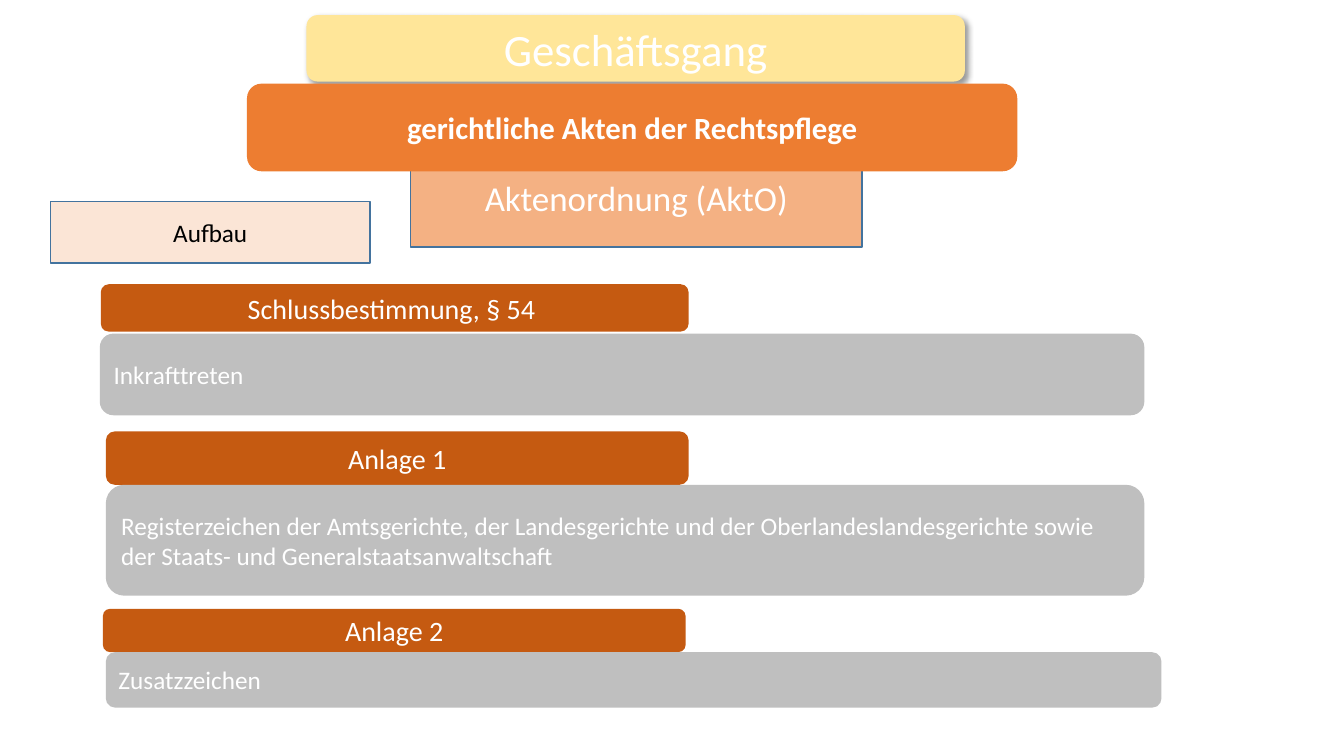
from lxml.etree import SubElement
from pptx import Presentation
from pptx.dml.color import RGBColor
from pptx.enum.shapes import MSO_SHAPE
from pptx.enum.text import MSO_ANCHOR, PP_ALIGN
from pptx.oxml.ns import qn
from pptx.util import Emu, Pt

SCALE = 9144
ROUND, RECT = MSO_SHAPE.ROUNDED_RECTANGLE, MSO_SHAPE.RECTANGLE
WHITE, EDGE = "FFFFFF", "43739E"
PARTS = [
    ("Schlussbestimmung, § 54 ", (100, 282, 583, 47),
     "Inkrafttreten", (99, 331, 1036, 81)),
    ("Anlage 1", (105, 428, 578, 53),
     "Registerzeichen der Amtsgerichte, der Landesgerichte und der "
     "Oberlandeslandesgerichte sowie der Staats- und Generalstaatsanwaltschaft",
     (105, 481, 1030, 110)),
    ("Anlage 2", (102, 604, 578, 43),
     "Zusatzzeichen", (105, 647, 1047, 55)),
]


def px(num):
    """Turn px into EMU."""
    return Emu(num * SCALE)


def paint(target, color):
    """Give a fill or font a solid colour."""
    if hasattr(target, "solid"):
        target.solid()
        target.fore_color.rgb = RGBColor.from_string(color)
    else:
        target.color.rgb = RGBColor.from_string(color)


def panel(slide, box, text, size, fill, kind=ROUND, edge=None,
          ink=WHITE, bold=False, align=PP_ALIGN.CENTER):
    """Place a filled shape with one paragraph of text."""
    shape = slide.shapes.add_shape(kind, *map(px, box))
    shape.shadow.inherit = False
    paint(shape.fill, fill)
    if edge:
        paint(shape.line.fill, edge)
        shape.line.width = Pt(1)
    else:
        shape.line.fill.background()
    frame = shape.text_frame
    frame.word_wrap = True
    frame.vertical_anchor = MSO_ANCHOR.MIDDLE
    line = frame.paragraphs[0]
    line.text = text
    line.alignment = align
    line.font.name = "Calibri"
    line.font.size = Pt(size)
    line.font.bold = bold
    paint(line.font, ink)
    return shape


def shade(shape):
    """Cast a soft shadow to the lower right."""
    effects = shape._element.spPr.find(qn("a:effectLst"))
    outer = SubElement(effects, qn("a:outerShdw"), blurRad=str(Pt(4)),
                       dist=str(Pt(3)), dir="2700000", algn="tl",
                       rotWithShape="0")
    tint = SubElement(outer, qn("a:srgbClr"), val="000000")
    SubElement(tint, qn("a:alpha"), val="40000")


def header(slide, box):
    """Stack the title, topic and rule labels within the box."""
    left, top, width, height = box
    shade(panel(slide, (left + 59, top, 653, 66),
                "Geschäftsgang", 32, "FFE699"))
    panel(slide, (left + 162, top + height - 98, 448, 98),
          "Aktenordnung (AktO)", 25, "F4B183", RECT, EDGE)
    panel(slide, (left, top + 68, width, 87),
          "gerichtliche Akten der Rechtspflege", 22, "ED7D31", bold=True)


def section(slide, title, head, text, body):
    """Place a heading bar and its grey body."""
    panel(slide, head, title, 20, "C55A11")
    panel(slide, body, text, 18, "BFBFBF", align=PP_ALIGN.LEFT)


def main():
    """Build and save the slide."""
    deck = Presentation()
    deck.slide_width, deck.slide_height = px(1333), px(750)
    slide = deck.slides.add_slide(deck.slide_layouts[6])
    header(slide, (245, 15, 764, 230))
    panel(slide, (50, 200, 317, 61), "Aufbau", 18, "FBE5D6", RECT, EDGE,
          "000000")
    for part in PARTS:
        section(slide, *part)
    deck.save("out.pptx")


if __name__ == "__main__":
    main()
